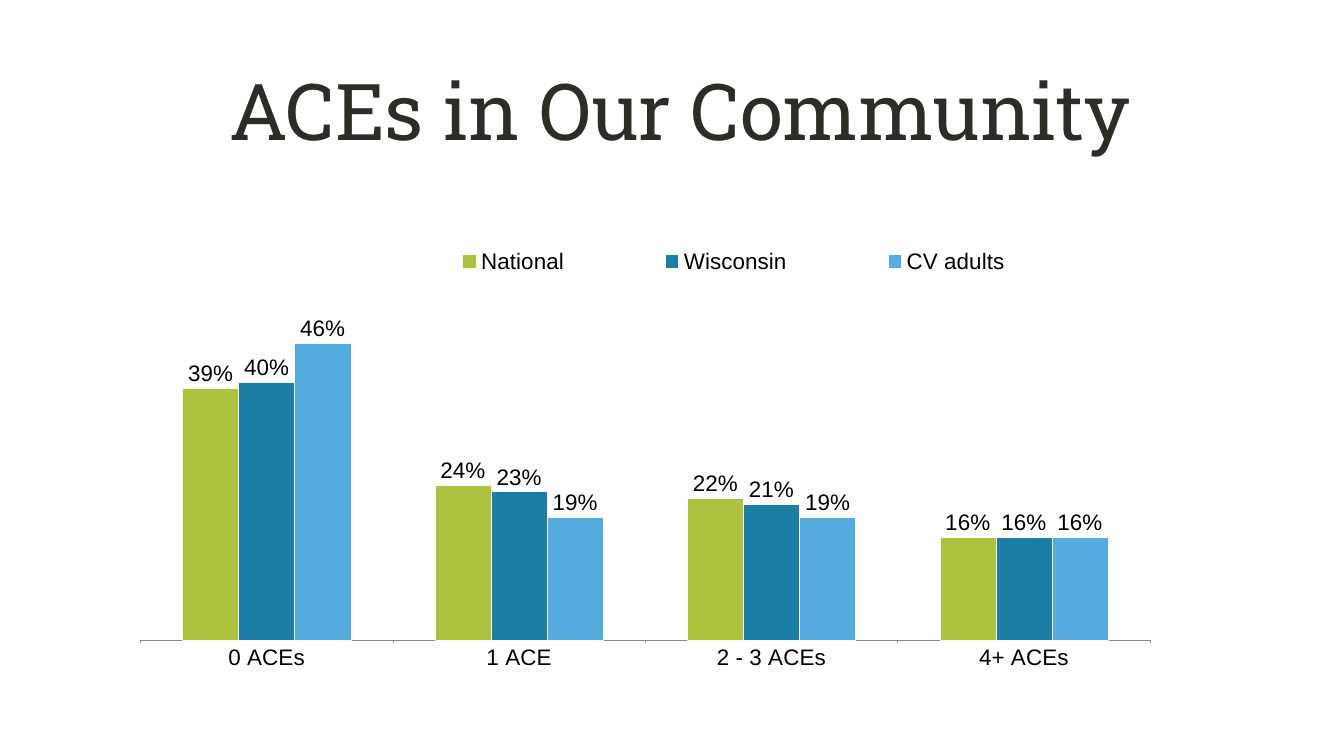
import pptx
import pptx.chart.data
import pptx.dml.color
import pptx.enum.chart
import pptx.enum.text
import pptx.oxml
import pptx.oxml.ns
import pptx.util
from pptx.util import Inches

RGBColor = pptx.dml.color.RGBColor
INK = RGBColor(0x2E, 0x2C, 0x27)
BLACK = RGBColor(0x00, 0x00, 0x00)
AXIS_GRAY = RGBColor(0x88, 0x88, 0x88)
BAR_EDGE = RGBColor(0xF9, 0xF9, 0xF9)
GREEN = RGBColor(0xAD, 0xC3, 0x3F)
TEAL = RGBColor(0x1D, 0x7E, 0xA3)
SKY = RGBColor(0x54, 0xAD, 0xDE)

CATEGORIES = ["0 ACEs", "1 ACE", "2 - 3 ACEs", "4+ ACEs"]
GROUPS = [
    ("National", GREEN, [0.39, 0.24, 0.22, 0.16]),
    ("Wisconsin", TEAL, [0.40, 0.23, 0.21, 0.16]),
    ("CV adults", SKY, [0.46, 0.19, 0.19, 0.16]),
]


def set_font(font, name="Arial", size=32, color=BLACK):
    font.name = name
    font.size = pptx.util.Pt(size)
    font.bold = False
    font.color.rgb = color


def write(frame, text, **style):
    para = frame.paragraphs[0]
    span = para.add_run()
    span.text = text
    set_font(span.font, **style)


def make_layout(x, y, width, height, inner=False):
    target = '<c:layoutTarget val="inner"/>' if inner else ""
    sizes = "".join(
        f'<c:{tag} val="{value}"/>'
        for tag, value in zip("xywh", (x, y, width, height))
    )
    return pptx.oxml.parse_xml(
        f'<c:layout {pptx.oxml.ns.nsdecls("c")}><c:manualLayout>{target}'
        f'<c:xMode val="edge"/><c:yMode val="edge"/>{sizes}'
        "</c:manualLayout></c:layout>"
    )


def place_plot(chart, layout):
    area = chart._chartSpace.chart.plotArea
    for old in area.findall(pptx.oxml.ns.qn("c:layout")):
        area.remove(old)
    area.insert(0, layout)


def place_legend(legend, layout):
    element = legend._element
    for old in element.findall(pptx.oxml.ns.qn("c:layout")):
        element.remove(old)
    element.find(pptx.oxml.ns.qn("c:legendPos")).addnext(layout)


class SlideBuilder:
    def __init__(self, page):
        self.page = page

    def title(self, text, left, top, width, height):
        box = self.page.shapes.add_textbox(
            Inches(left), Inches(top), Inches(width), Inches(height)
        )
        frame = box.text_frame
        frame.word_wrap = True
        frame.vertical_anchor = pptx.enum.text.MSO_ANCHOR.MIDDLE
        frame.margin_left = frame.margin_right = Inches(0.06)
        frame.margin_top = frame.margin_bottom = Inches(0.06)
        write(frame, text, name="Roboto Slab", size=112, color=INK)

    def column_chart(self, categories, groups, left, top, width, height):
        data = pptx.chart.data.CategoryChartData(number_format="0%")
        data.categories = categories
        for name, _, values in groups:
            data.add_series(name, values)
        chart = self.page.shapes.add_chart(
            pptx.enum.chart.XL_CHART_TYPE.COLUMN_CLUSTERED,
            Inches(left), Inches(top), Inches(width), Inches(height), data,
        ).chart
        chart.has_title = False
        set_font(chart.font, size=10)
        plot = chart.plots[0]
        plot.gap_width = 150
        plot.overlap = 0
        plot.vary_by_categories = False
        for series, (_, color, _) in zip(plot.series, groups):
            self.style_series(series, color)
        self.style_axes(chart)
        self.add_legend(chart)
        place_plot(chart, make_layout(0.021, 0.134, 0.982, 0.823, inner=True))

    def style_series(self, series, color):
        series.format.fill.solid()
        series.format.fill.fore_color.rgb = color
        series.format.line.color.rgb = BAR_EDGE
        series.format.line.width = pptx.util.Pt(0.75)
        labels = series.data_labels
        labels.show_value = True
        labels.position = pptx.enum.chart.XL_LABEL_POSITION.OUTSIDE_END
        labels.number_format = "0%"
        labels.number_format_is_linked = False
        set_font(labels.font)

    def style_axes(self, chart):
        axis = chart.category_axis
        axis.major_tick_mark = pptx.enum.chart.XL_TICK_MARK.OUTSIDE
        axis.has_major_gridlines = False
        axis.format.line.color.rgb = AXIS_GRAY
        axis.format.line.width = pptx.util.Pt(1)
        set_font(axis.tick_labels.font)
        scale = chart.value_axis
        scale.maximum_scale = 0.55
        scale.major_unit = 0.125
        scale.has_major_gridlines = False
        scale.visible = False

    def add_legend(self, chart):
        chart.has_legend = True
        legend = chart.legend
        legend.position = pptx.enum.chart.XL_LEGEND_POSITION.TOP
        legend.include_in_layout = True
        set_font(legend.font)
        place_legend(legend, make_layout(0.24, 0.05, 0.71, 0.07))


def main():
    deck = pptx.Presentation()
    deck.slide_width = Inches(26.67)
    deck.slide_height = Inches(15)
    builder = SlideBuilder(deck.slides.add_slide(deck.slide_layouts[6]))
    builder.title("ACEs in Our Community", 4.5, 0.92, 22.97, 2.5)
    builder.column_chart(CATEGORIES, GROUPS, 2.42, 4.36, 20.41, 9.72)
    deck.save("out.pptx")


if __name__ == "__main__":
    main()
